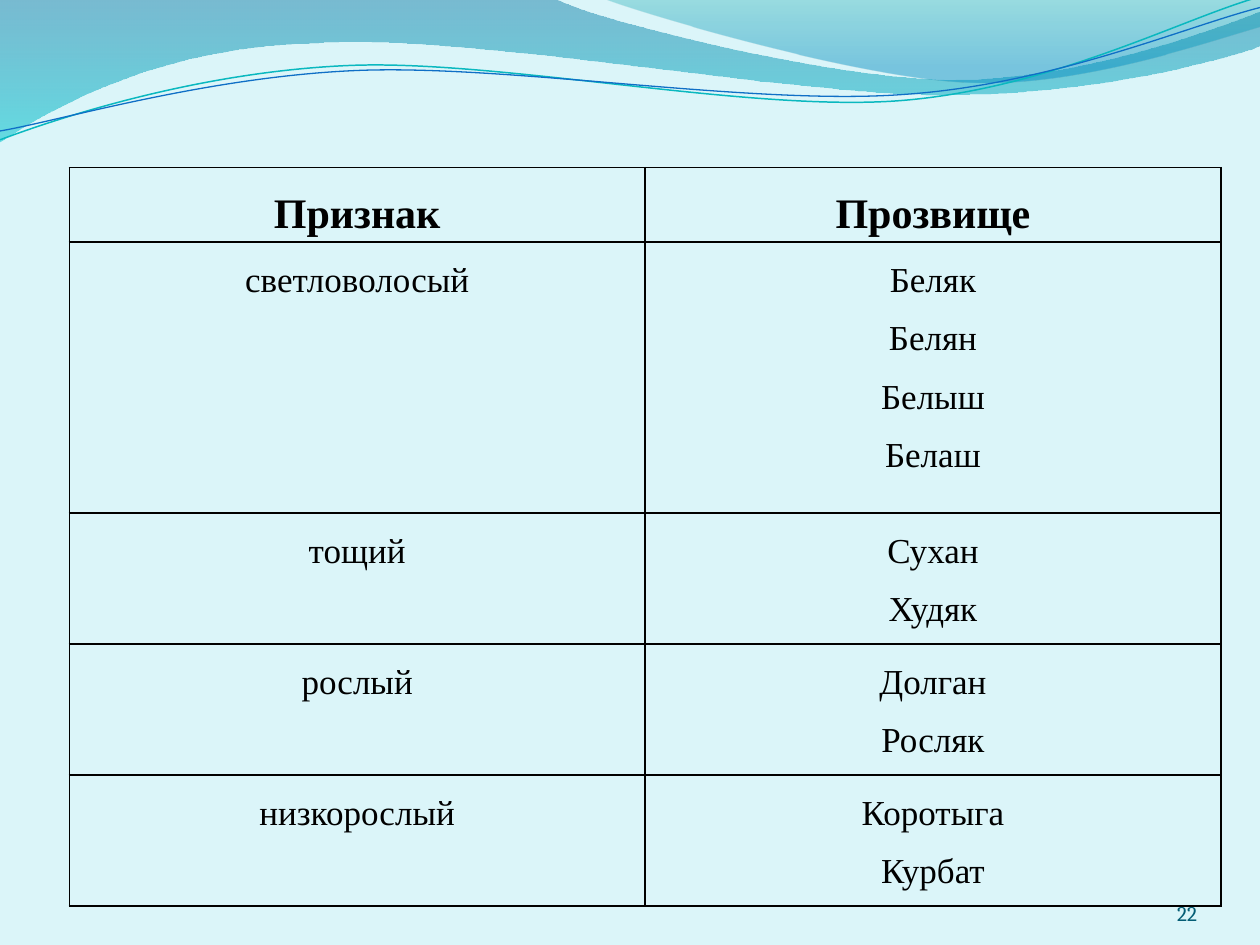
from math import cos, radians, sin

from lxml import etree
from pptx import Presentation
from pptx.dml.color import RGBColor
from pptx.enum.text import MSO_ANCHOR as Anchor, PP_ALIGN as Align
from pptx.oxml.ns import qn
from pptx.util import Inches, Pt

BACKGROUND = RGBColor(0xDB, 0xF5, 0xF9)
BLACK = RGBColor(0x00, 0x00, 0x00)
DEEP_BLUE = RGBColor(0x00, 0x74, 0xA1)
TURQUOISE = RGBColor(0x00, 0xC6, 0xCF)
TEAL = RGBColor(0x00, 0xA1, 0xA9)
SKY_BLUE = RGBColor(0x00, 0x8B, 0xBF)
LINE_TEAL = RGBColor(0x0A, 0xB8, 0xBF)
LINE_BLUE = RGBColor(0x0F, 0x6F, 0xC6)
NUMBER_BLUE = RGBColor(0x04, 0x5D, 0x75)

BODY_FONT = "Times New Roman"
NUMBER_FONT = "Cambria"
LINE_TILT = -2.7

# Wave outlines: a pair is a straight step, six numbers are a cubic curve
BROAD_WAVE = [
    (0, 0), (4.4, -0.01), (4.76, 0.17, 6.64, 0.63, 7.58, 0.63),
    (8.53, 0.63, 9.58, 0.26, 10, 0.09), (10.01, 0.36),
    (9.83, 0.44, 8.7, 0.76, 7.46, 0.75), (6.22, 0.75, 3.82, 0.28, 2.57, 0.34),
    (1.29, 0.36, 0.46, 0.83, -0.01, 1.13), (0, 0),
]
RIGHT_WAVE = [
    (4.79, -0.01), (5.09, 0.11, 6.82, 0.62, 7.69, 0.65),
    (8.56, 0.69, 9.61, 0.32, 10, 0.21), (10, 0), (4.79, -0.01),
]
TEAL_LINE = [
    (0, 1.11), (0.48, 0.93, 1.58, 0.57, 2.77, 0.52),
    (3.95, 0.47, 5.93, 0.89, 7.13, 0.8), (8.33, 0.71, 9.38, 0.15, 9.98, -0.02),
]
BLUE_LINE = [
    (0, 1.04), (0.47, 0.96, 1.64, 0.61, 2.83, 0.56),
    (4.03, 0.51, 5.97, 0.84, 7.17, 0.75), (8.36, 0.67, 9.41, 0.21, 10, 0.06),
]

HEADINGS = ("Признак", "Прозвище")
NICKNAMES = [
    ("светловолосый", ["Беляк", "Белян", "Белыш", "Белаш"]),
    ("тощий", ["Сухан", "Худяк"]),
    ("рослый", ["Долган", "Росляк"]),
    ("низкорослый", ["Коротыга", "Курбат"]),
]
ROW_HEIGHTS = [0.59, 2.15, 1.04, 1.04, 1.04]


def write_text(frame, lines, size=20, font=BODY_FONT, color=BLACK, bold=False,
               align=Align.CENTER, spacing=None):
    """Write each line as a paragraph in one format."""
    for index, line in enumerate(lines):
        paragraph = frame.add_paragraph() if index else frame.paragraphs[0]
        paragraph.alignment = align
        if spacing:
            paragraph.line_spacing = spacing
        run = paragraph.add_run()
        run.text = line
        run.font.size = Pt(size)
        run.font.name = font
        run.font.bold = bold
        run.font.color.rgb = color


def level(steps, center, tilt):
    """Turn all points of an outline back by its tilt around its center."""
    turn, (middle_x, middle_y) = radians(-tilt), center
    leveled = []
    for step in steps:
        numbers = []
        for x, y in zip(step[::2], step[1::2]):
            dx, dy = x - middle_x, y - middle_y
            numbers += [middle_x + dx * cos(turn) - dy * sin(turn),
                        middle_y + dx * sin(turn) + dy * cos(turn)]
        leveled.append(tuple(numbers))
    return leveled


class WaveSlide:
    def __init__(self, deck):
        self.slide = deck.slides.add_slide(deck.slide_layouts[6])
        fill = self.slide.background.fill
        fill.solid()
        fill.fore_color.rgb = BACKGROUND

    def outline(self, steps, close):
        ends = [(Inches(step[-2]), Inches(step[-1])) for step in steps]
        builder = self.slide.shapes.build_freeform(*ends[0])
        builder.add_line_segments(ends[1:], close=close)
        shape = builder.convert_to_shape()
        shape.shadow.inherit = False
        # Bend the straight segments that stand for cubic curves
        segments = list(shape._element.iter(qn("a:lnTo")))
        for segment, step in zip(segments, steps[1:]):
            if len(step) == 6:
                bend = etree.Element(qn("a:cubicBezTo"))
                for x, y in zip(step[::2], step[1::2]):
                    etree.SubElement(bend, qn("a:pt"), x=str(Inches(x) - shape.left),
                                     y=str(Inches(y) - shape.top))
                segment.getparent().replace(segment, bend)
        return shape

    def wave(self, steps, stops):
        """Fill an outline from top to bottom; stops are (position, colour, opacity %)."""
        shape = self.outline(steps, close=True)
        shape.line.fill.background()
        shape.fill.gradient()
        shape.fill.gradient_angle = 270
        for stop, (position, color, _) in zip(shape.fill.gradient_stops, stops):
            stop.position = position
            stop.color.rgb = color
        gradient = shape._element.spPr.find(qn("a:gradFill"))
        for tint, (_, _, opacity) in zip(gradient.iter(qn("a:srgbClr")), stops):
            etree.SubElement(tint, qn("a:alpha"), val=str(opacity * 1000))

    def curve(self, steps, center, color, width):
        shape = self.outline(level(steps, center, LINE_TILT), close=False)
        shape.rotation = LINE_TILT
        shape.fill.background()
        shape.line.color.rgb = color
        shape.line.width = Pt(width)

    def cell(self, cell, lines, **style):
        cell.margin_left = cell.margin_right = Inches(0.07)
        cell.margin_top = cell.margin_bottom = 0
        cell.fill.background()
        write_text(cell.text_frame, lines, spacing=1.5, **style)
        properties = cell._tc.get_or_add_tcPr()
        for index, side in enumerate(("lnL", "lnR", "lnT", "lnB")):
            border = etree.Element(qn(f"a:{side}"), w=str(Pt(1)))
            solid = etree.SubElement(border, qn("a:solidFill"))
            etree.SubElement(solid, qn("a:srgbClr"), val=str(BLACK))
            properties.insert(index, border)

    def table(self, left, top, width, headings, rows, heights):
        table = self.slide.shapes.add_table(
            len(heights), len(headings), Inches(left), Inches(top),
            Inches(width), Inches(sum(heights))).table
        table.first_row = table.horz_banding = False
        for row, height in zip(table.rows, heights):
            row.height = Inches(height)
        for column, heading in enumerate(headings):
            self.cell(table.cell(0, column), [heading], size=24, bold=True)
        for index, (trait, names) in enumerate(rows, start=1):
            self.cell(table.cell(index, 0), [trait])
            self.cell(table.cell(index, 1), names)

    def page_number(self, left, top, width, height, number):
        box = self.slide.shapes.add_textbox(*map(Inches, (left, top, width, height)))
        frame = box.text_frame
        frame.word_wrap = True
        frame.vertical_anchor = Anchor.BOTTOM
        frame.margin_left = frame.margin_right = frame.margin_top = frame.margin_bottom = 0
        write_text(frame, [number], size=12, font=NUMBER_FONT, color=NUMBER_BLUE,
                   align=Align.RIGHT)


def main():
    deck = Presentation()
    deck.slide_width, deck.slide_height = Inches(10), Inches(7.5)
    page = WaveSlide(deck)

    # Waves along the top
    page.wave(BROAD_WAVE, [(0, DEEP_BLUE, 45), (1, TURQUOISE, 55)])
    page.wave(RIGHT_WAVE, [(0, TEAL, 30), (0.8, SKY_BLUE, 45)])
    page.curve(TEAL_LINE, (4.99, 0.57), LINE_TEAL, 0.85)
    page.curve(BLUE_LINE, (5, 0.59), LINE_BLUE, 0.75)

    # Traits and nicknames
    page.table(0.55, 1.33, 9.14, HEADINGS, NICKNAMES, ROW_HEIGHTS)

    page.page_number(8.67, 6.95, 0.83, 0.4, "22")
    deck.save("out.pptx")


if __name__ == "__main__":
    main()
